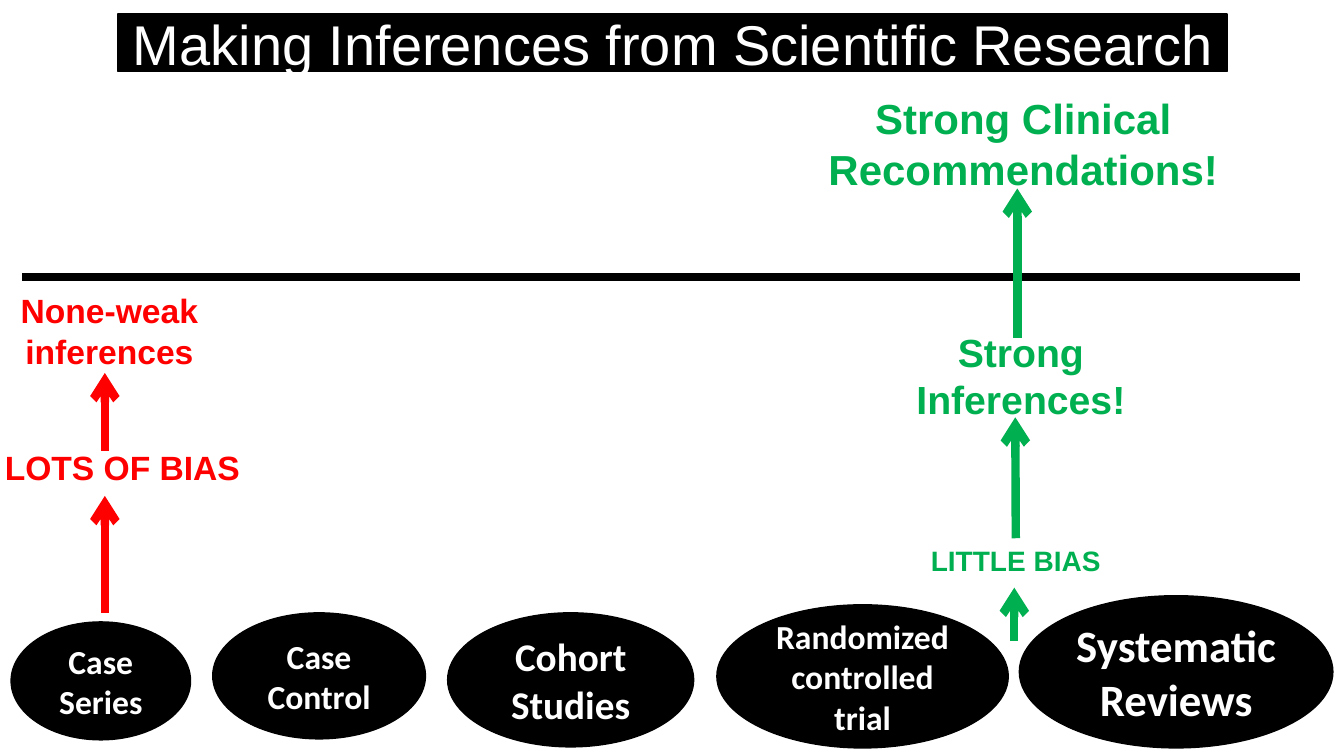
"""Build a slide on the inferences each kind of study design supports."""
from lxml.etree import SubElement
from pptx import Presentation
from pptx.dml.color import RGBColor
from pptx.enum.shapes import MSO_CONNECTOR, MSO_SHAPE
from pptx.enum.text import MSO_ANCHOR, MSO_AUTO_SIZE, PP_ALIGN
from pptx.oxml.ns import qn
from pptx.util import Pt

PX = 9144
BLACK = RGBColor(0, 0, 0)
WHITE = RGBColor(255, 255, 255)
RED = RGBColor(255, 0, 0)
GREEN = RGBColor(0, 176, 80)


def write(shape, text, color, anchor, face):
    """Fill a shape with centred text in one format."""
    frame = shape.text_frame
    frame.text = text
    frame.word_wrap = True
    frame.auto_size = MSO_AUTO_SIZE.NONE
    frame.vertical_anchor = anchor
    for para in frame.paragraphs:
        para.alignment = PP_ALIGN.CENTER
        font = para.runs[0].font
        for key, value in face.items():
            setattr(font, key, value)
        font.color.rgb = color


def draw(ends, color, arrow):
    """Draw a thick straight line, with an arrowhead if asked."""
    line = slide.shapes.add_connector(MSO_CONNECTOR.STRAIGHT, *[n * PX for n in ends])
    line.line.color.rgb = color
    line.line.width = Pt(6)
    if arrow:
        SubElement(line.line._get_or_add_ln(), qn("a:tailEnd"), type="arrow")
    SubElement(line._element.spPr, qn("a:effectLst"))
    return line


deck = Presentation()
deck.slide_width, deck.slide_height = 1333 * PX, 750 * PX
slide = deck.slides.add_slide(deck.slide_layouts[5])

title = slide.shapes.title
place = {"left": 117, "top": 14, "width": 1100, "height": 57}
for key, value in place.items():
    setattr(title, key, value * PX)
title.fill.solid()
title.fill.fore_color.rgb = BLACK
title.line.color.rgb = BLACK
title.line.width = Pt(1)
write(title, "Making Inferences from Scientific Research", WHITE, MSO_ANCHOR.MIDDLE,
      {"name": "Arial", "size": Pt(40), "bold": False})

draw((22, 275, 1289, 275), BLACK, False)

notes = [
    ("None-weak inferences", (3, 283, 211, 91), 24, RED),
    ("LOTS OF BIAS", (-12, 438, 267, 50), 24, RED),
    ("Strong Clinical Recommendations!", (810, 87, 410, 111), 30, GREEN),
    ("Strong\nInferences!", (879, 321, 267, 104), 28, GREEN),
    ("LITTLE BIAS", (802, 534, 411, 44), 20, GREEN),
]
for text, box, size, color in notes:
    note = slide.shapes.add_textbox(*[n * PX for n in box])
    write(note, text, color, MSO_ANCHOR.TOP,
          {"name": "Arial", "size": Pt(size), "bold": True})

studies = [
    ("Case Series", (11, 617, 178, 117), 24),
    ("Case Control", (211, 608, 211, 125), 24),
    ("Cohort Studies", (444, 608, 244, 133), 28),
    ("Randomized controlled trial", (711, 600, 289, 142), 24),
    ("Systematic Reviews", (1011, 591, 311, 151), 32),
]
for text, box, size in studies:
    oval = slide.shapes.add_shape(MSO_SHAPE.OVAL, *[n * PX for n in box])
    oval.shadow.inherit = False
    oval.fill.solid()
    oval.fill.fore_color.rgb = BLACK
    oval.line.color.rgb = BLACK
    oval.line.width = Pt(1)
    write(oval, text, WHITE, MSO_ANCHOR.MIDDLE,
          {"name": "Calibri", "size": Pt(size), "bold": True})

arrows = [
    (104, 608, 492, RED),
    (104, 447, 370, RED),
    (1009, 335, 187, GREEN),
    (1006, 636, 583, GREEN),
    (1007, 534, 414, GREEN),
]
for x, low, high, color in arrows:
    arrow = draw((x, low, x, high), color, True)
arrow.begin_connect(note, 0)

deck.save("out.pptx")
